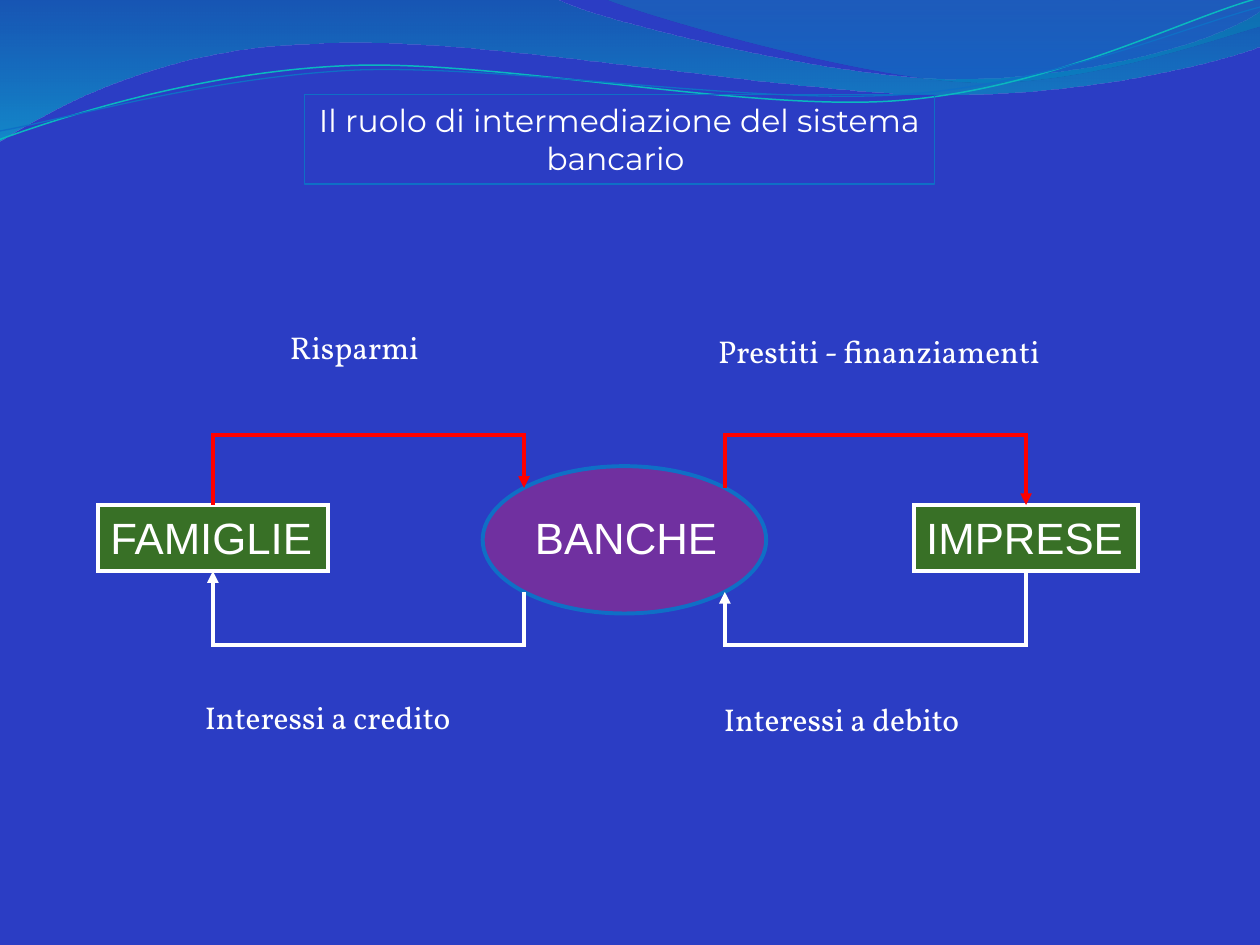
from lxml import etree
from pptx import Presentation
from pptx import util as u
from pptx.dml.color import RGBColor
from pptx.enum import shapes, text
from pptx.oxml.ns import qn

Pt = u.Pt
rgb = RGBColor.from_string
WHITE, RED, BLUE, GREEN, PURPLE = "FFFFFF", "FF0000", "0F6FC6", "387026", "7030A0"


def draw_wave(start, segments, closed):
    """Outline in points; a pair is a corner, six numbers are a Bézier curve."""
    points = [(Pt(x), Pt(y)) for s in segments for x, y in zip(s[::2], s[1::2])]
    outline = slide.shapes.build_freeform(Pt(start[0]), Pt(start[1]))
    outline.add_line_segments(points, close=closed)
    wave = outline.convert_to_shape()
    wave.shadow.inherit = False
    # Gather the three points of each curve into one cubic segment
    steps = iter(list(wave._element.iter(qn("a:lnTo"))))
    for segment in segments:
        step = next(steps)
        if len(segment) == 6:
            step.addprevious(curve := etree.Element(qn("a:cubicBezTo")))
            for corner in (step, next(steps), next(steps)):
                curve.append(corner[0])
                corner.getparent().remove(corner)
    return wave


def set_text(frame, words, size, font, align=text.PP_ALIGN.LEFT, wrap=False):
    frame.text = words
    frame.word_wrap = wrap
    frame.auto_size = text.MSO_AUTO_SIZE.SHAPE_TO_FIT_TEXT
    paragraph = frame.paragraphs[0]
    paragraph.alignment = align
    run_font = paragraph.runs[0].font
    run_font.size, run_font.name, run_font.color.rgb = Pt(size), font, rgb(WHITE)


prs = Presentation()
prs.slide_width, prs.slide_height = Pt(720), Pt(540)
slide = prs.slides.add_slide(prs.slide_layouts[5])
slide.background.fill.solid()
slide.background.fill.fore_color.rgb = rgb("2B3DC4")

# Translucent waves: start, segments, gradient stops (position, colour, alpha %)
bands = [
    ((0, 0),
     [(317, -1), (343, 12, 478, 45, 546, 45), (614, 45, 690, 27, 720, 6.5), (721, 26),
      (708, 32, 626, 55, 537, 54), (448, 54, 275, 20, 185, 24.5), (93, 26, 33, 60, -1, 81)],
     [(0, "0074A1", 45), (1, "00C6CF", 55)]),
    ((345, -1),
     [(366, 8, 491, 45, 554, 47), (616, 50, 692, 23, 720, 15), (720, 0)],
     [(0, "00A1A9", 30), (0.8, "008BBF", 45)]),
]
for start, segments, stops in bands:
    band = draw_wave(start, segments, True)
    band.line.fill.background()
    band.fill.gradient()
    band.fill.gradient_angle = 270
    for stop, (position, colour, alpha) in zip(band.fill.gradient_stops, stops):
        stop.position, stop.color.rgb = position, rgb(colour)
    for node, (_, _, alpha) in zip(band._element.spPr.iter(qn("a:srgbClr")), stops):
        etree.SubElement(node, qn("a:alpha")).set("val", str(alpha * 1000))

# Thin wave lines
strands = [
    ((-1, 80), [(35, 67, 114, 41, 199, 37.5), (284, 34, 427, 64, 513, 57.5),
                (600, 51, 675, 11, 719, -1)], "0AB8BF", 0.85),
    ((-1, 75), [(34, 69, 118, 44, 204, 40), (290, 37, 430, 60, 516, 54),
                (602, 48, 678, 15, 720, 4)], BLUE, 0.75),
]
for start, segments, colour, weight in strands:
    strand = draw_wave(start, segments, False)
    strand.fill.background()
    strand.line.color.rgb, strand.line.width = rgb(colour), Pt(weight)

# Title, in front of the waves
title = slide.shapes.title
slide.shapes._spTree.append(title._element)
title.left, title.top, title.width, title.height = Pt(174), Pt(54), Pt(360), Pt(51)
set_text(title.text_frame, "Il ruolo di intermediazione del sistema bancario ", 18,
         "Montserrat", text.PP_ALIGN.CENTER, True)
title.text_frame.auto_size = text.MSO_AUTO_SIZE.NONE
title.text_frame.vertical_anchor = text.MSO_ANCHOR.TOP
title.line.color.rgb, title.line.width = rgb(BLUE), Pt(1)

# Banks, households and firms
RECT, OVAL = shapes.MSO_SHAPE.RECTANGLE, shapes.MSO_SHAPE.OVAL
actors = [
    (OVAL, 275.8, 266.4, 162, 84.2, PURPLE, BLUE, None),
    (RECT, 56, 288.6, 131.5, 37.7, GREEN, WHITE, "FAMIGLIE"),
    (RECT, 522.2, 288.6, 128.2, 37.7, GREEN, WHITE, "IMPRESE"),
]
for kind, left, top, width, height, fill, line, name in actors:
    actor = slide.shapes.add_shape(kind, Pt(left), Pt(top), Pt(width), Pt(height))
    actor.shadow.inherit = False
    actor.fill.solid()
    actor.fill.fore_color.rgb = rgb(fill)
    actor.line.color.rgb, actor.line.width = rgb(line), Pt(2.25)
    etree.SubElement(actor._element.spPr.find(qn("a:ln")), qn("a:miter")).set("lim", "800000")
    if name:
        set_text(actor.text_frame, name, 25, "Arial")
        actor.text_frame.vertical_anchor = text.MSO_ANCHOR.TOP

# Banks stand apart from their oval, between the shapes and the flows
BANKS = ("BANCHE", 298.6, 288.6, 121, 37.7, 25, "Arial")

# Flows: start, end, height of the level stretch, colour, arrow end
flows = [
    ((299.5, 278.7), (121.7, 288.6), 248.4, RED, "headEnd"),
    ((299.5, 338.3), (121.7, 326.3), 368.6, WHITE, "tailEnd"),
    ((414.2, 278.7), (586.3, 288.6), 248.4, RED, "tailEnd"),
    ((586.3, 326.3), (414.2, 338.3), 368.6, WHITE, "tailEnd"),
]
for (x1, y1), (x2, y2), level, colour, arrow in flows:
    # The elbow is laid out on its side and then turned by a quarter
    width, height = abs(y2 - y1), abs(x2 - x1)
    left, top = (x1 + x2 - width) / 2, (y1 + y2 - height) / 2
    flow = slide.shapes.add_connector(shapes.MSO_CONNECTOR.ELBOW, Pt(left), Pt(top),
                                      Pt(left + width), Pt(top + height))
    flow.line.color.rgb, flow.line.width = rgb(colour), Pt(2.25)
    properties = flow._element.spPr
    above = level < y1
    frame = properties.find(qn("a:xfrm"))
    frame.set("rot", str((270 if above else 90) * 60000))
    frame.set("flipH", str(int((y1 < y2) == above)))
    frame.set("flipV", str(int((x1 > x2) == above)))
    bend = etree.SubElement(properties.find(qn("a:prstGeom")).find(qn("a:avLst")), qn("a:gd"))
    bend.set("name", "adj1")
    bend.set("fmla", f"val {round((level - y1) / (y2 - y1) * 100000)}")
    stroke = properties.find(qn("a:ln"))
    etree.SubElement(stroke, qn("a:miter")).set("lim", "800000")
    etree.SubElement(stroke, qn("a:" + arrow)).set("type", "triangle")
    etree.SubElement(properties, qn("a:effectLst"))

# Labels
labels = [
    BANKS,
    ("Risparmi", 158.6, 184, 109.4, 36, 18, "Vollkorn"),
    ("Prestiti - finanziamenti", 403.2, 186, 250.6, 36, 18, "Vollkorn"),
    ("Interessi a credito", 110, 395.3, 203.8, 36, 18, "Vollkorn"),
    ("Interessi a debito", 406.6, 396.7, 197.3, 36, 18, "Vollkorn"),
]
for words, left, top, width, height, size, font in labels:
    label = slide.shapes.add_textbox(Pt(left), Pt(top), Pt(width), Pt(height))
    set_text(label.text_frame, words, size, font)

prs.save("out.pptx")
